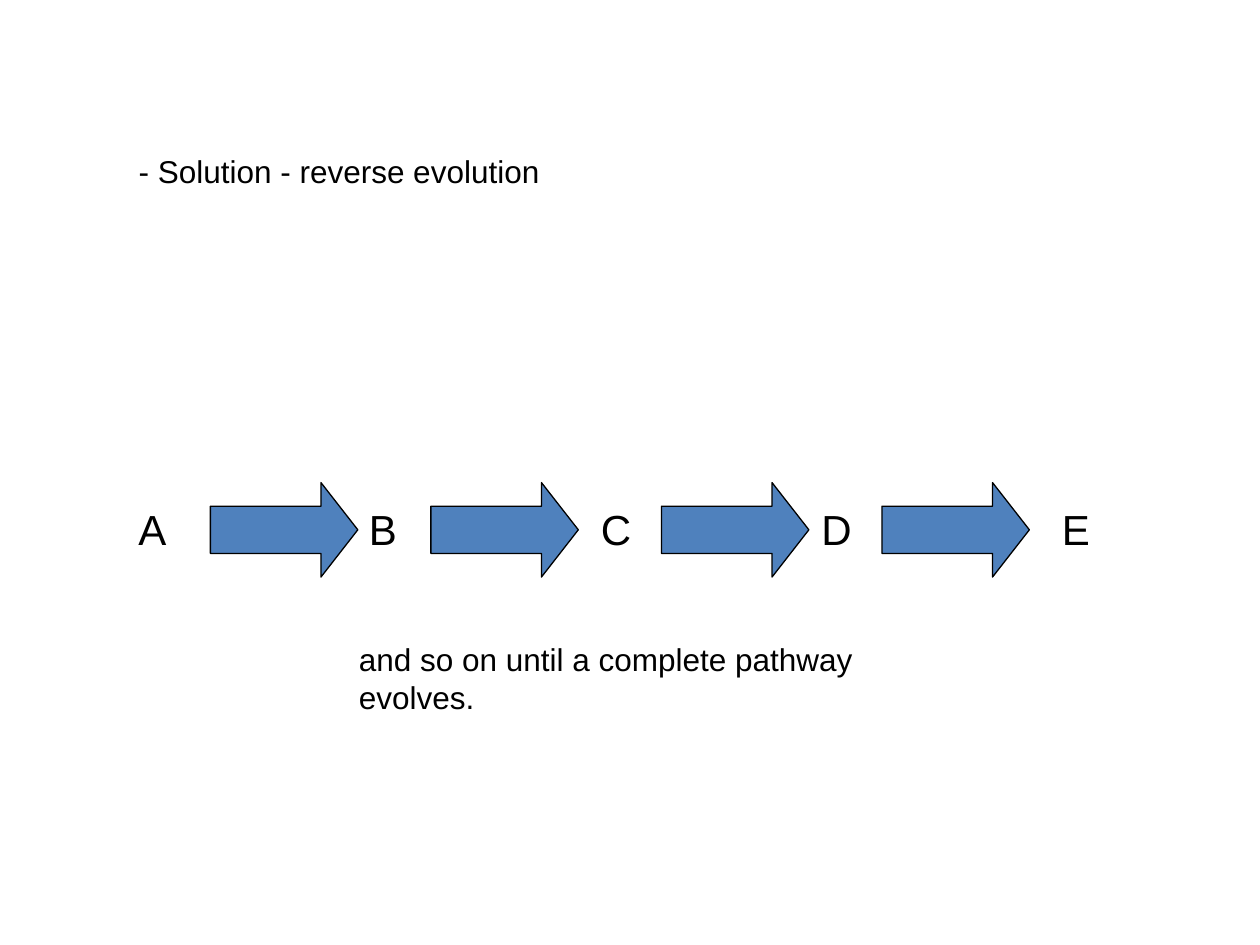
from pptx import Presentation
from pptx import util as u
from pptx.dml.color import RGBColor
from pptx.enum import shapes, text


def color(value):
    return RGBColor.from_string(value)


class SlideBuilder:
    font_name = "Arial"
    ink = "000000"
    arrow_fill = "4F81BD"

    def __init__(self, slide):
        self.slide = slide

    def set_text(self, shape, words, size, top_margin=0.08):
        frame = shape.text_frame
        frame_format = {
            "word_wrap": True,
            "auto_size": text.MSO_AUTO_SIZE.NONE,
            "vertical_anchor": text.MSO_ANCHOR.TOP,
            "margin_top": u.Inches(top_margin),
        }
        for name, value in frame_format.items():
            setattr(frame, name, value)
        paragraph = frame.paragraphs[0]
        paragraph.alignment = text.PP_ALIGN.LEFT
        run = paragraph.add_run()
        run.text = words
        for name, value in {"name": self.font_name, "size": u.Pt(size)}.items():
            setattr(run.font, name, value)
        run.font.color.rgb = color(self.ink)

    def title(self, words, left, top, width, height):
        shape = self.slide.shapes.title
        box = {"left": left, "top": top, "width": width, "height": height}
        for name, value in box.items():
            setattr(shape, name, u.Inches(value))
        self.set_text(shape, words, 18, top_margin=0.38)

    def label(self, words, left, top, width, height, size):
        shape = self.slide.shapes.add_textbox(
            *map(u.Inches, (left, top, width, height)))
        self.set_text(shape, words, size)

    def arrow(self, left, top, width, height):
        shape = self.slide.shapes.add_shape(
            shapes.MSO_SHAPE.RIGHT_ARROW,
            *map(u.Inches, (left, top, width, height)))
        shape.adjustments[0] = 0.5
        shape.adjustments[1] = 0.39
        shape.shadow.inherit = False
        shape.fill.solid()
        shape.fill.fore_color.rgb = color(self.arrow_fill)
        shape.line.color.rgb = color(self.ink)
        shape.line.width = u.Pt(0.75)


def main():
    presentation = Presentation()
    presentation.slide_width = u.Inches(10)
    presentation.slide_height = u.Inches(7.5)
    title_only = presentation.slide_layouts[5]
    builder = SlideBuilder(presentation.slides.add_slide(title_only))

    # Heading
    builder.title("- Solution - reverse evolution", 1, 0.83, 7.42, 1.01)

    # Pathway steps and the arrows between them
    for left in (1.67, 3.42, 5.25, 7):
        builder.arrow(left, 3.83, 1.17, 0.75)
    for letter, left in zip("ABCDE", (1, 2.83, 4.67, 6.42, 8.33)):
        builder.label(letter, left, 3.92, 0.58, 0.5, 24)

    # Closing remark
    builder.label("and so on until a complete pathway evolves.",
                  2.75, 5, 4.42, 0.7, 18)

    presentation.save("out.pptx")


if __name__ == "__main__":
    main()
